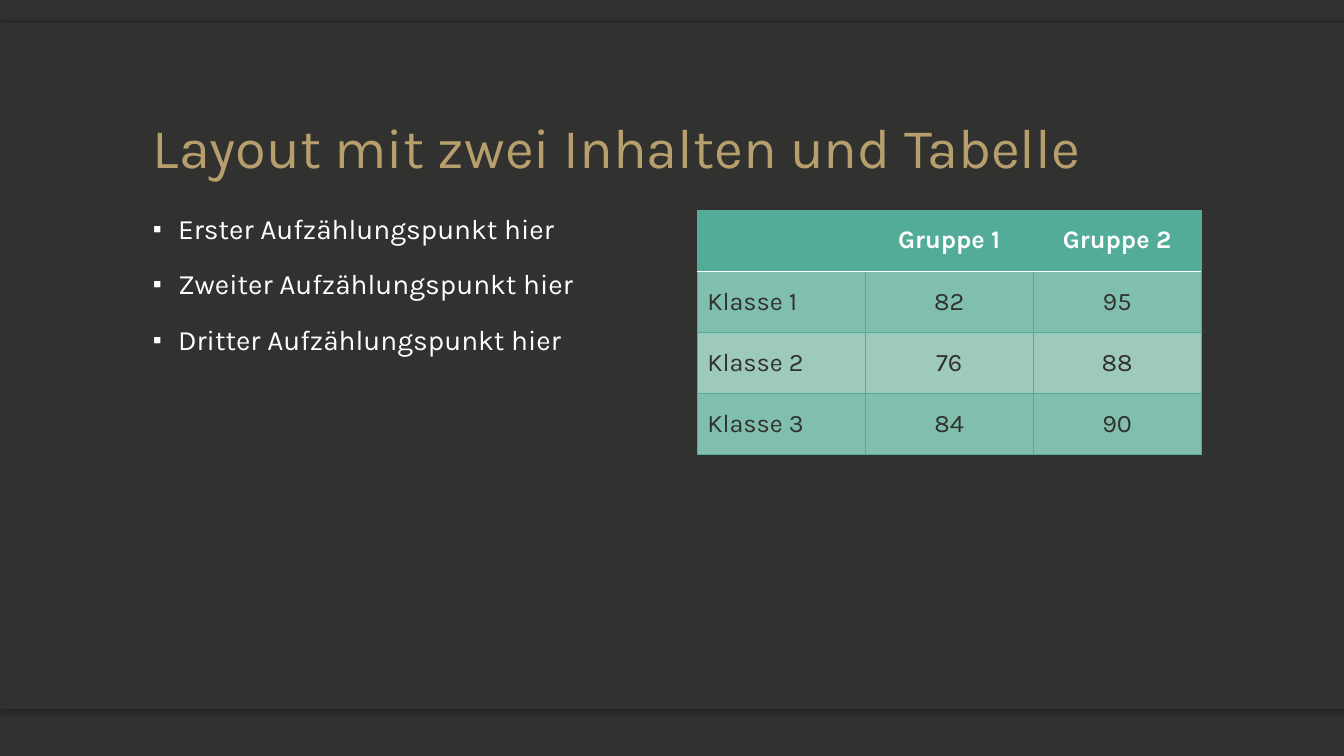
from dataclasses import dataclass

from lxml import etree
from pptx import Presentation
from pptx.dml.color import RGBColor
from pptx.enum.shapes import MSO_SHAPE
from pptx.enum.text import MSO_ANCHOR, MSO_AUTO_SIZE, PP_ALIGN
from pptx.oxml.ns import qn
from pptx.util import Pt

RECTANGLE = MSO_SHAPE.RECTANGLE
LEFT, CENTER = PP_ALIGN.LEFT, PP_ALIGN.CENTER
TOP, MIDDLE, BOTTOM = MSO_ANCHOR.TOP, MSO_ANCHOR.MIDDLE, MSO_ANCHOR.BOTTOM
NO_AUTOFIT = MSO_AUTO_SIZE.NONE
TWO_CONTENT_LAYOUT = 3


@dataclass(frozen=True)
class Theme:
    font: str = "Karla"
    dark: str = "31312F"
    gold: str = "B79E6D"
    white: str = "FFFFFF"
    teal: str = "52AC97"
    odd_row: str = "80BFAE"
    even_row: str = "9DCABD"
    title_size: int = 40
    bullet_size: int = 20
    table_size: int = 18


@dataclass(frozen=True)
class Box:
    """A region in points."""
    left: float
    top: float
    width: float
    height: float

    def lengths(self):
        return [Pt(v) for v in (self.left, self.top, self.width, self.height)]


THEME = Theme()
PAGE = Box(0, 0, 960, 540)
TITLE = "Layout mit zwei Inhalten und Tabelle"
BULLETS = ["Erster Aufzählungspunkt hier", "Zweiter Aufzählungspunkt hier",
           "Dritter Aufzählungspunkt hier"]
RESULTS = [["", "Gruppe 1", "Gruppe 2"],
           ["Klasse 1", "82", "95"],
           ["Klasse 2", "76", "88"],
           ["Klasse 3", "84", "90"]]


def style_font(font, size, color, bold=False):
    font.name = THEME.font
    font.size = Pt(size)
    font.bold = bold
    font.color.rgb = RGBColor.from_string(color)


def add_child(parent, tag, **attributes):
    child = etree.SubElement(parent, qn(tag))
    for name, value in attributes.items():
        child.set(name, str(value))
    return child


def add_shadow(shape, degrees):
    effects = add_child(shape._element.spPr, "a:effectLst")
    shadow = add_child(effects, "a:outerShdw", blurRad=Pt(4), dist=Pt(2),
                       dir=degrees * 60000, algn="ctr", rotWithShape=0)
    add_child(add_child(shadow, "a:srgbClr", val="000000"), "a:alpha", val=25000)


def add_backdrop(slide, box):
    """Dark page whose centre panel casts a shadow at its top and bottom edge."""
    slide.background.fill.solid()
    slide.background.fill.fore_color.rgb = RGBColor.from_string(THEME.dark)
    strip_height = 35.3
    lower_top = box.top + box.height - strip_height
    layers = [(Box(box.left, lower_top, box.width, strip_height), 90),
              (Box(box.left, box.top, box.width, strip_height), 270),
              (box, None)]
    for depth, (layer, shadow_angle) in enumerate(layers):
        panel = slide.shapes.add_shape(RECTANGLE, *layer.lengths())
        panel.fill.solid()
        panel.fill.fore_color.rgb = RGBColor.from_string(THEME.dark)
        panel.line.fill.background()
        if shadow_angle is None:
            panel.shadow.inherit = False
        else:
            add_shadow(panel, shadow_angle)
        # Behind the placeholders, after the two property elements of the tree
        slide.shapes._spTree.insert(2 + depth, panel._element)


def place_placeholder(placeholder, box, anchor):
    placeholder.left, placeholder.top, placeholder.width, placeholder.height = box.lengths()
    frame = placeholder.text_frame
    frame.word_wrap = True
    frame.auto_size = NO_AUTOFIT
    frame.vertical_anchor = anchor
    return frame


def fill_title(placeholder, box):
    frame = place_placeholder(placeholder, box, BOTTOM)
    frame.text = TITLE
    heading = frame.paragraphs[0]
    heading.alignment = LEFT
    heading.line_spacing = 0.9
    style_font(heading.runs[0].font, THEME.title_size, THEME.gold)


def fill_bullets(placeholder, box):
    frame = place_placeholder(placeholder, box, TOP)
    frame.text = "\n".join(BULLETS)
    for index, point in enumerate(frame.paragraphs):
        properties = point._p.get_or_add_pPr()
        properties.set("marL", str(Pt(18)))
        properties.set("indent", str(-Pt(18)))
        add_child(properties, "a:buSzPct", val=90000)
        add_child(properties, "a:buFont", typeface="Arial")
        add_child(properties, "a:buChar", char="▪")
        point.line_spacing = 0.9
        point.space_before = Pt(18 if index else 0)
        style_font(point.runs[0].font, THEME.bullet_size, THEME.white)


def set_borders(cell, **overrides):
    """Thin teal lines; an override gives (colour, width) for L, R, T or B."""
    properties = cell._tc.get_or_add_tcPr()
    for position, side in enumerate("LRTB"):
        color, width = overrides.get(side, (THEME.teal, 0.5))
        line = add_child(properties, f"a:ln{side}", w=Pt(width))
        add_child(add_child(line, "a:solidFill"), "a:srgbClr", val=color)
        properties.insert(position, line)


def add_results_table(slide, box):
    rows, columns = len(RESULTS), len(RESULTS[0])
    table = slide.shapes.add_table(rows, columns, *box.lengths()).table
    for column in table.columns:
        column.width = Pt(box.width / columns)
    for row in table.rows:
        row.height = Pt(box.height / rows)
    header_rule = (THEME.white, 1)
    for r, values in enumerate(RESULTS):
        header = r == 0
        background = THEME.teal if header else THEME.odd_row if r % 2 else THEME.even_row
        for c, value in enumerate(values):
            cell = table.cell(r, c)
            cell.fill.solid()
            cell.fill.fore_color.rgb = RGBColor.from_string(background)
            set_borders(cell, **({"B": header_rule} if header else
                                 {"T": header_rule} if r == 1 else {}))
            cell.vertical_anchor = MIDDLE
            cell.text = value
            entry = cell.text_frame.paragraphs[0]
            entry.alignment = CENTER if c else LEFT
            style_font(entry.font, THEME.table_size,
                       THEME.white if header else THEME.dark, header)
            for run in entry.runs:
                style_font(run.font, THEME.table_size,
                           THEME.white if header else THEME.dark, header)


def build_two_content_slide(deck, box):
    slide = deck.slides.add_slide(deck.slide_layouts[TWO_CONTENT_LAYOUT])
    title, bullets, spare = slide.placeholders
    spare._element.getparent().remove(spare._element)
    left, top = box.left + 102, box.top + 150
    width, column_width = 756, 360
    add_backdrop(slide, Box(box.left, box.top + 16.6, box.width, 489.6))
    fill_title(title, Box(left, box.top + 33, width, 99.4))
    fill_bullets(bullets, Box(left, top, column_width, 336))
    add_results_table(slide, Box(left + width - column_width, top, column_width, 174.8))


def main():
    deck = Presentation()
    deck.slide_width, deck.slide_height = Pt(PAGE.width), Pt(PAGE.height)
    build_two_content_slide(deck, PAGE)
    deck.save("out.pptx")


if __name__ == "__main__":
    main()
